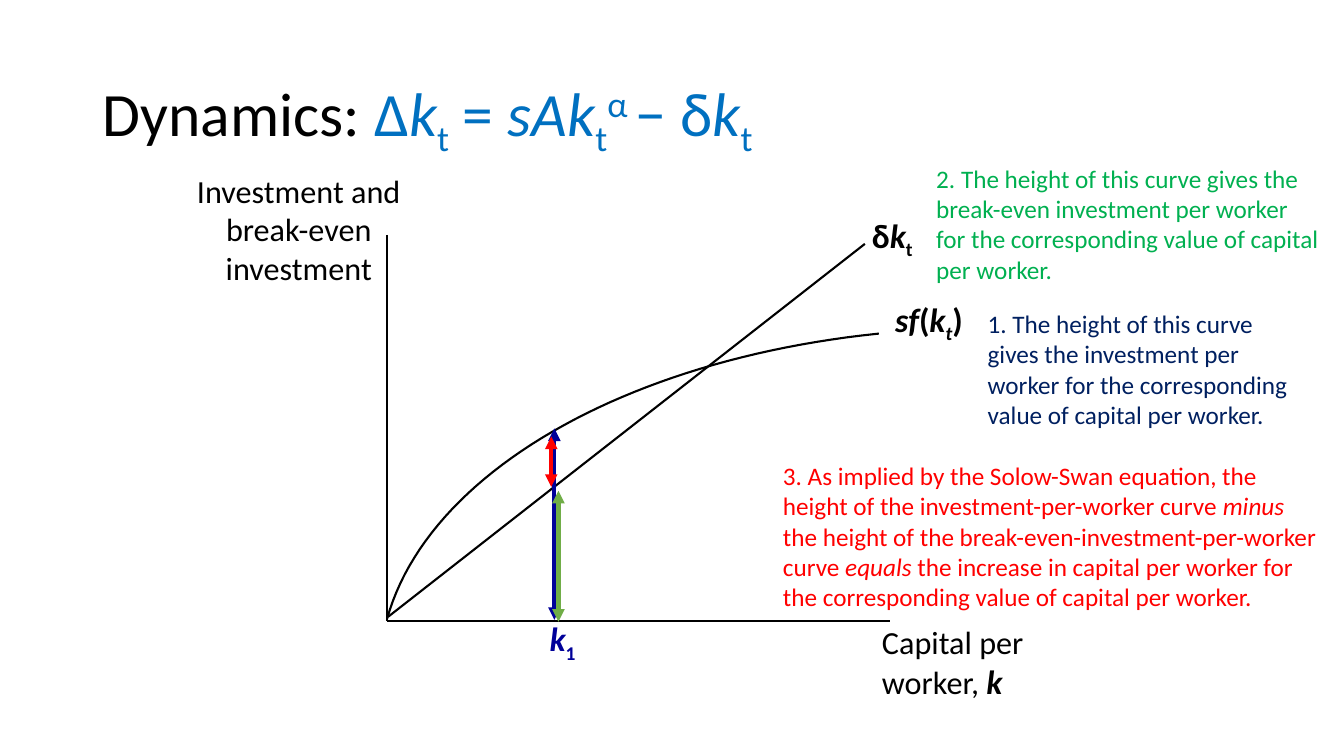
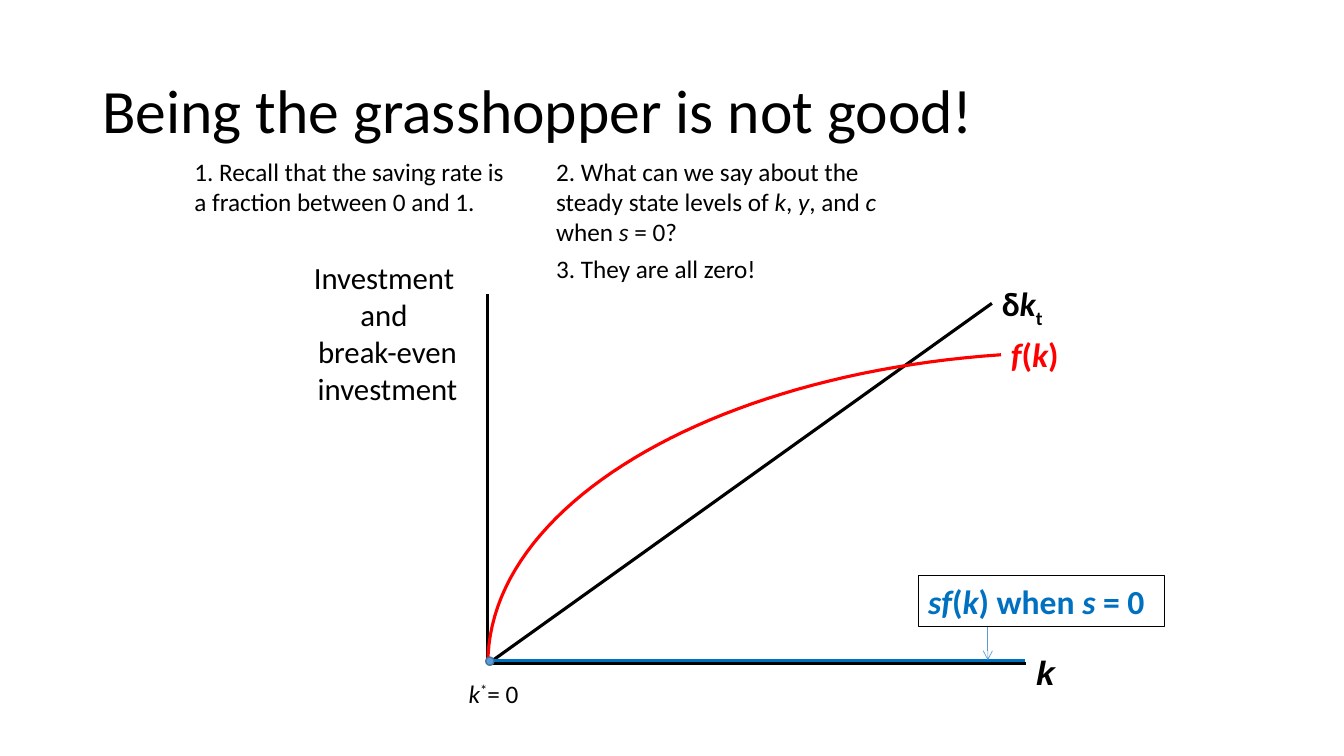
"""Build two slides on the dynamics of capital per worker in the Solow-Swan model."""
from pptx import Presentation
from pptx.dml.color import RGBColor
from pptx.enum import shapes, text
from pptx.oxml import ns, xmlchemy
from pptx.util import Pt

FONT = "Calibri"
BLACK, RED, BLUE, NAVY = "000000", "FF0000", "0070C0", "002060"
GREEN, LEAF, INDIGO, SKY, STEEL = "00B050", "70AD47", "000099", "5B9BD5", "43739E"
TITLE_SIZE, LABEL_SIZE, NOTE_SIZE = 44, 24, 18
BASELINES = {"_": "-25000", "^": "30000"}
CURVE_STEPS = 48
DEPRECIATION = [("δ", ""), ("k", "i"), ("t", "_")]


def colour(hex_string):
    """Turn a hex string into a colour."""
    return RGBColor.from_string(hex_string)


def add_run(paragraph, content, style="", run_colour=None, size=None):
    """Add a run; style letters are i italic, b bold, _ subscript, ^ superscript."""
    for index, piece in enumerate(content.split("\n")):
        if index:
            paragraph.add_line_break()
        run = paragraph.add_run()
        run.text = piece
        if "i" in style:
            run.font.italic = True
        if "b" in style:
            run.font.bold = True
        if run_colour:
            run.font.color.rgb = colour(run_colour)
        if size:
            run.font.size = Pt(size)
        for mark, offset in BASELINES.items():
            if mark in style:
                run.font._element.set("baseline", offset)


def add_text(slide, box, runs, size, text_colour=BLACK, bold=False, tight=False,
             centred=False, font=FONT):
    """Add a text box; a tight one has no margins and is anchored in the middle."""
    shape = slide.shapes.add_textbox(*map(Pt, box))
    frame = shape.text_frame
    frame.word_wrap = True
    if tight:
        frame.margin_left = frame.margin_right = frame.margin_top = frame.margin_bottom = 0
        frame.vertical_anchor = text.MSO_ANCHOR.MIDDLE
    paragraph = frame.paragraphs[0]
    paragraph.alignment = text.PP_ALIGN.CENTER if centred else text.PP_ALIGN.LEFT
    paragraph.font.name = font
    paragraph.font.size = Pt(size)
    paragraph.font.bold = bold
    paragraph.font.color.rgb = colour(text_colour)
    for run in runs:
        add_run(paragraph, *run)
    return shape


def add_title(slide, runs):
    """Add the slide title."""
    shape = add_text(slide, (73.2, 28.8, 813.6, 104.4), runs, TITLE_SIZE, tight=True)
    shape.text_frame.paragraphs[0].line_spacing = 0.9


def add_label(slide, box, runs, label_colour=BLACK, **options):
    """Add a bold label for a curve or a point."""
    return add_text(slide, box, runs, LABEL_SIZE, label_colour, bold=True, **options)


def add_note(slide, box, runs, note_colour=BLACK):
    """Add an explanatory note."""
    add_text(slide, box, runs, NOTE_SIZE, note_colour)


def set_line(shape, line_colour, width):
    """Set the outline of a shape."""
    shape.line.color.rgb = colour(line_colour)
    shape.line.width = Pt(width)


def add_line(slide, start, end, line_colour, width, head=None, tail=None):
    """Add a straight line with optional arrowheads."""
    connector = slide.shapes.add_connector(
        shapes.MSO_CONNECTOR.STRAIGHT, *map(Pt, (*start, *end)))
    set_line(connector, line_colour, width)
    outline = connector.get_or_add_ln()
    for tag, kind in (("a:headEnd", head), ("a:tailEnd", tail)):
        if kind:
            arrowhead = xmlchemy.OxmlElement(tag)
            arrowhead.set("type", kind)
            outline.append(arrowhead)
    properties = connector._element.find(ns.qn("p:spPr"))
    properties.append(xmlchemy.OxmlElement("a:effectLst"))


def add_gap_arrow(slide, x, top, bottom, arrow_colour):
    """Add a vertical double-headed arrow that marks a height."""
    add_line(slide, (x, top), (x, bottom), arrow_colour, 3, "triangle", "triangle")


def add_curve(slide, controls, line_colour, width):
    """Add a cubic curve through four control points."""
    points = []
    for step in range(CURVE_STEPS + 1):
        t = step / CURVE_STEPS
        weights = ((1 - t) ** 3, 3 * t * (1 - t) ** 2, 3 * t ** 2 * (1 - t), t ** 3)
        points.append(tuple(Pt(sum(w * c for w, c in zip(weights, axis)))
                            for axis in zip(*controls)))
    builder = slide.shapes.build_freeform(*points[0])
    builder.add_line_segments(points[1:], close=False)
    shape = builder.convert_to_shape()
    shape.fill.background()
    shape.shadow.inherit = False
    set_line(shape, line_colour, width)


def add_axes(slide, origin, top, right, width):
    """Add the vertical and the horizontal axis."""
    x, y = origin
    add_line(slide, (x, top), origin, BLACK, width)
    add_line(slide, origin, (right, y), BLACK, width)


def build_dynamics(slide):
    """Build the slide on the change in capital per worker."""
    add_axes(slide, (276.5, 443.5), 167.8, 635.8, 1)
    add_text(slide, (131.8, 121.7, 163.4, 83.5),
             [("Investment and break-even investment",)], 23, tight=True, centred=True)
    add_text(slide, (630, 444.2, 126, 56.9),
             [("Capital per \nworker, ",), ("k", "bi", None, 24)], 23, tight=True)
    add_curve(slide, [(627.8, 238.3), (445.7, 257), (305.3, 338.4), (276.5, 442.1)],
              BLACK, 1.5)
    add_label(slide, (639.4, 215.3, 69.8, 28.8),
              [("sf", "i"), ("(",), ("k", "i"), ("t", "i_"), (")",)], tight=True)
    add_label(slide, (622.8, 155.5, 108, 28.8), DEPRECIATION, tight=True)
    add_line(slide, (277.2, 440.6), (617.8, 174.2), BLACK, 1.5)
    add_label(slide, (380.9, 436.3, 41.8, 43.2), [("k", "i"), ("1", "_")], INDIGO,
              tight=True, centred=True)
    add_gap_arrow(slide, 396, 306, 442.8, INDIGO)
    add_title(slide, [
        ("Dynamics: ",), ("Δ", "", BLUE), ("k", "i", BLUE), ("t", "_", BLUE),
        (" = ", "", BLUE), ("sAk", "i", BLUE), ("t", "_", BLUE), ("α ", "^", BLUE),
        ("− δ", "", BLUE), ("k", "i", BLUE), ("t", "_", BLUE)])
    add_gap_arrow(slide, 398.9, 350.6, 444.2, LEAF)
    add_note(slide, (698.4, 216.7, 243.4, 94.3), [
        ("1. The height of this curve gives the investment per worker for the "
         "corresponding value of capital per worker.",)], NAVY)
    add_note(slide, (661.7, 113, 288, 94.3), [
        ("2. The height of this curve gives the break-even investment per worker "
         "for the corresponding value of capital per worker.",)], GREEN)
    add_note(slide, (552.2, 325.4, 398.2, 116.6), [
        ("3. As implied by the Solow-Swan equation, the height of the "
         "investment-per-worker curve ",), ("minus", "i"),
        (" the height of the break-even-investment-per-worker curve ",),
        ("equals", "i"),
        (" the increase in capital per worker for the corresponding value of "
         "capital per worker.",)], RED)
    add_gap_arrow(slide, 393.8, 311.8, 347.8, RED)


def build_grasshopper(slide):
    """Build the slide on a saving rate of zero."""
    origin = (348.5, 474.2)
    add_axes(slide, origin, 210.2, 733, 2.25)
    add_title(slide, [("Being the grasshopper is not good!",)])
    add_text(slide, (202.3, 184.3, 149, 106.6),
             [("Investment \nand \nbreak-even investment",)], 22, tight=True, centred=True)
    add_label(slide, (733, 462.2, 36, 36), [("k", "i")], font="Arial")
    add_label(slide, (708.5, 198.7, 113, 36), DEPRECIATION)
    add_line(slide, origin, (708.5, 216.7), BLACK, 2.25)
    add_curve(slide, [(715, 253.4), (505.4, 267.8), (348.5, 362.2), origin], RED, 2.25)
    add_label(slide, (715, 234.7, 102.2, 36),
              [("f", "i"), ("(",), ("k", "i"), (")",)], RED)
    add_note(slide, (327.6, 481, 58.3, 28.8), [("k", "i"), ("*", "^"), ("= 0",)])
    add_note(slide, (390.2, 108, 252, 72.7), [
        ("2. What can we say about the steady state levels of ",), ("k", "i"), (", ",),
        ("y", "i"), (", and ",), ("c", "i"), (" when ",), ("s", "i"), (" = 0?",)])
    add_note(slide, (131.8, 108, 239.8, 51.1),
             [("1. Recall that the saving rate is a fraction between 0 and 1.",)])
    add_line(slide, (347.8, 471.6), (732.2, 471.6), BLUE, 2.25)
    callout = add_label(slide, (655.9, 411.1, 175.7, 36.4), [
        ("sf", "i"), ("(",), ("k", "i"), (") when ",), ("s", "i"), (" = 0",)], BLUE)
    set_line(callout, BLACK, 0.75)
    add_line(slide, (705.6, 447.8), (705.6, 471.6), SKY, 0.5, tail="arrow")
    dot = slide.shapes.add_shape(
        shapes.MSO_SHAPE.OVAL, *map(Pt, (347, 469.4, 5.8, 5.8)))
    dot.shadow.inherit = False
    dot.fill.solid()
    dot.fill.fore_color.rgb = colour(SKY)
    set_line(dot, STEEL, 1)
    add_note(slide, (390.2, 177.1, 193.7, 28.8), [("3. They are all zero!",)])


def main():
    """Build and save the presentation."""
    presentation = Presentation()
    presentation.slide_width, presentation.slide_height = Pt(960), Pt(540)
    blank = presentation.slide_layouts[6]
    for build in (build_dynamics, build_grasshopper):
        build(presentation.slides.add_slide(blank))
    presentation.save("out.pptx")


if __name__ == "__main__":
    main()
